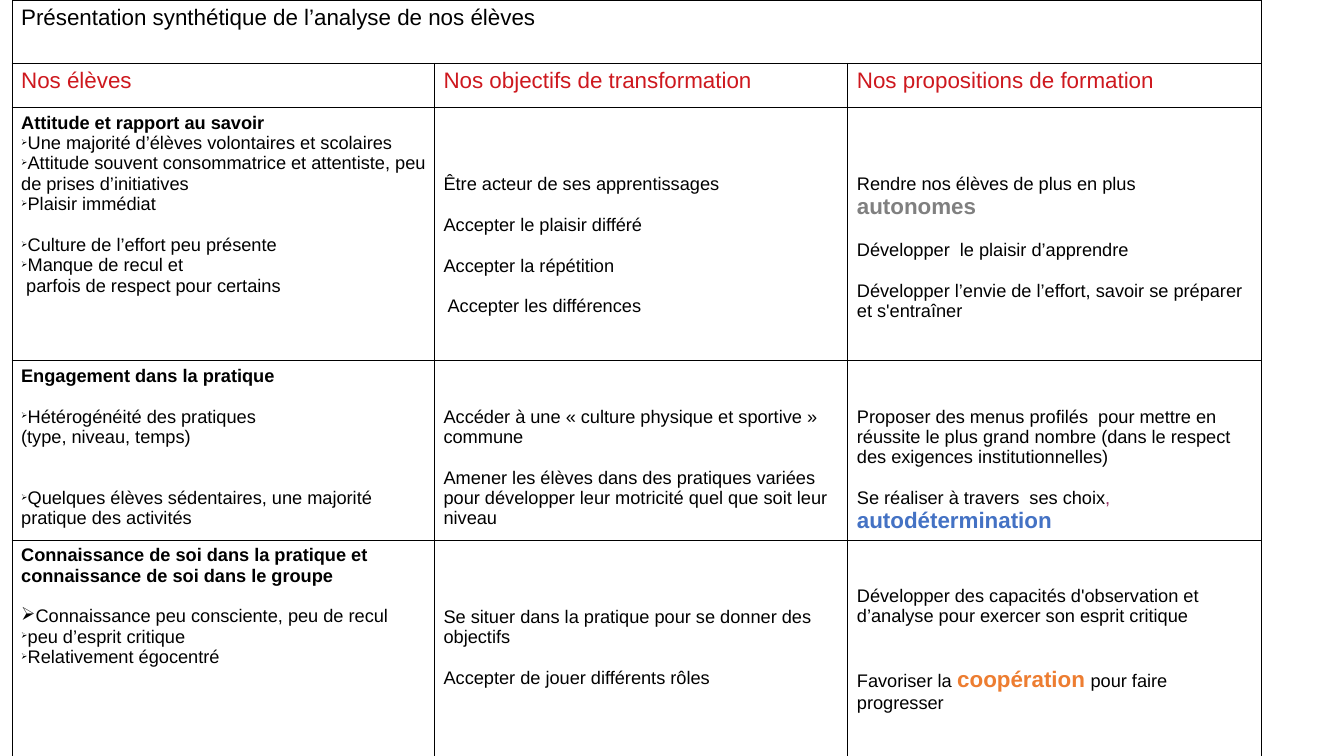
"""Build the slide that sums up the pupils, the aims and the training plan."""
from lxml import etree
from pptx import Presentation
from pptx.dml.color import RGBColor
from pptx.oxml.ns import qn
from pptx.util import Inches, Pt

COLORS = {"black": "000000", "red": "CE181E", "gray": "808080",
          "plum": "993366", "blue": "4472C4", "orange": "ED7D31"}
STYLES = {"title": (16, "black", False), "head": (16, "red", False),
          "body": (13, "black", False), "bold": (13, "black", True),
          "gray": (16, "gray", True), "comma": (13, "plum", False),
          "blue": (16, "blue", True), "orange": (16, "orange", True),
          "space": (14, "orange", False)}
FONT = "Arial"
LINE = 14.6
LEFT = 0.12
COLS = (4.19, 4.1, 4.1)
ROWS = (0.63, 0.44, 2.51, 1.78, 2.21)
SIDE, TOP = 0.09, 0.05


def para(*runs, gap=0, style="body", mark=0):
    """Describe a paragraph: lines of gap above, style, bullet percent."""
    return runs, gap, style, mark


def item(text, gap=0, mark=45):
    """Describe a bulleted paragraph."""
    return para(text, gap=gap, mark=mark)


def bold(text):
    """Describe the bold heading of a cell."""
    return para(text, style="bold")


def head(text):
    """Describe a column heading."""
    return [para(text, style="head")]


GRID = [
    [[para("Présentation synthétique de l’analyse de nos élèves", style="title")]],
    [head("Nos élèves"), head("Nos objectifs de transformation"),
     head("Nos propositions de formation")],
    [[bold("Attitude et rapport au savoir"),
      item("Une majorité d’élèves volontaires et scolaires"),
      item("Attitude souvent consommatrice et attentiste, peu de prises d’initiatives"),
      item("Plaisir immédiat"),
      item("Culture de l’effort peu présente", gap=1),
      item("Manque de recul et"),
      para(" parfois de respect pour certains")],
     [para("Être acteur de ses apprentissages", gap=3),
      para("Accepter le plaisir différé", gap=1),
      para("Accepter la répétition", gap=1),
      para(" Accepter les différences", gap=1)],
     [para("Rendre nos élèves de plus en plus ", ("autonomes", "gray"), gap=3),
      para("Développer  le plaisir d’apprendre", gap=1),
      para("Développer l’envie de l’effort, savoir se préparer et s'entraîner", gap=1)]],
    [[bold("Engagement dans la pratique"),
      item("Hétérogénéité des pratiques", gap=1),
      para("(type, niveau, temps)"),
      item("Quelques élèves sédentaires, une majorité pratique des activités", gap=2)],
     [para("Accéder à une « culture physique et sportive » commune", gap=2),
      para("Amener les élèves dans des pratiques variées pour développer "
           "leur motricité quel que soit leur niveau", gap=1)],
     [para("Proposer des menus profilés  pour mettre en réussite le plus grand "
           "nombre (dans le respect des exigences institutionnelles)", gap=2),
      para("Se réaliser à travers  ses choix", (", ", "comma"),
           ("autodétermination", "blue"), gap=1)]],
    [[bold("Connaissance de soi dans la pratique et connaissance de soi dans le groupe"),
      item("Connaissance peu consciente, peu de recul", gap=1, mark=100),
      item("peu d’esprit critique"),
      item("Relativement égocentré")],
     [para("Se situer dans la pratique pour se donner des objectifs", gap=3),
      para("Accepter de jouer différents rôles", gap=1)],
     [para("Développer des capacités d'observation et d’analyse pour exercer "
           "son esprit critique", gap=2),
      para("Favoriser la", (" ", "space"), ("coopération", "orange"),
           (" ", "space"), "pour faire progresser", gap=2)]],
]


def paint(font, style):
    """Apply a named style to a font."""
    size, color, strong = STYLES[style]
    font.name, font.size, font.bold = FONT, Pt(size), strong
    font.color.rgb = RGBColor.from_string(COLORS[color])


def bullet(line, share):
    """Give a paragraph an arrow bullet of the given percent."""
    props = line._p.get_or_add_pPr()
    props.set("marL", "0")
    props.set("indent", "0")
    etree.SubElement(props, qn("a:buSzPct"), val=str(share * 1000))
    etree.SubElement(props, qn("a:buChar"), char="➢")


def border(cell):
    """Draw thin black lines round a cell."""
    props = cell._tc.get_or_add_tcPr()
    for spot, side in enumerate(("lnL", "lnR", "lnT", "lnB")):
        edge = etree.Element(qn("a:" + side), w=str(Pt(1)))
        fill = etree.SubElement(edge, qn("a:solidFill"))
        etree.SubElement(fill, qn("a:srgbClr"), val=COLORS["black"])
        props.insert(spot, edge)


def write(cell, paras):
    """Fill a cell with paragraphs, the first gap going to its top margin."""
    frame = cell.text_frame
    cell.margin_top = Inches(TOP) + Pt(paras[0][1] * LINE)
    for spot, (runs, gap, style, mark) in enumerate(paras):
        line = frame.add_paragraph() if spot else frame.paragraphs[0]
        if mark:
            bullet(line, mark)
        if spot and gap:
            line.space_before = Pt(gap * LINE)
        paint(line.font, style)
        for part in runs:
            text, look = (part, None) if isinstance(part, str) else part
            run = line.add_run()
            run.text = text
            if look:
                paint(run.font, look)


def add_grid(slide):
    """Add the table with its sizes, lines and text."""
    table = slide.shapes.add_table(
        len(ROWS), len(COLS), Inches(LEFT), 0,
        Inches(sum(COLS)), Inches(sum(ROWS))).table
    table.first_row = table.horz_banding = False
    for col, width in zip(table.columns, COLS):
        col.width = Inches(width)
    for row, height in zip(table.rows, ROWS):
        row.height = Inches(height)
    for cell in table.iter_cells():
        cell.fill.background()
        cell.margin_left = cell.margin_right = Inches(SIDE)
        cell.margin_bottom = Inches(TOP)
        border(cell)
    table.cell(0, 0).merge(table.cell(0, len(COLS) - 1))
    for row, cells in enumerate(GRID):
        for col, paras in enumerate(cells):
            write(table.cell(row, col), paras)


def main():
    """Build and save the slide."""
    deck = Presentation()
    deck.slide_width, deck.slide_height = Inches(13.33), Inches(7.5)
    add_grid(deck.slides.add_slide(deck.slide_layouts[6]))
    deck.save("out.pptx")


if __name__ == "__main__":
    main()
